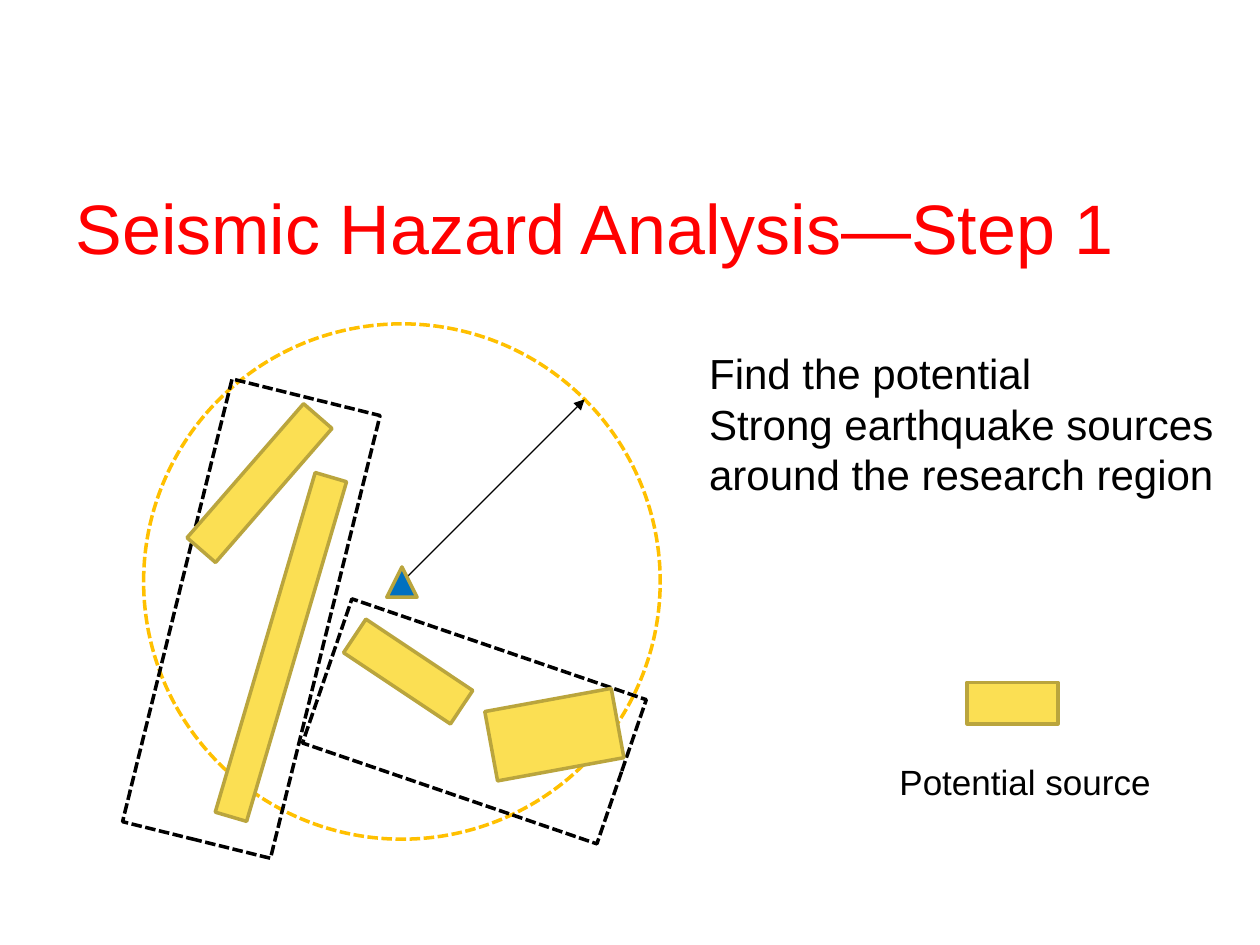
from pptx import Presentation
from pptx.dml.color import RGBColor
from pptx.enum.dml import MSO_LINE
from pptx.enum.shapes import MSO_CONNECTOR, MSO_SHAPE
from pptx.enum.text import MSO_ANCHOR, PP_ALIGN
from pptx.oxml.ns import qn
from pptx.util import Inches, Pt
from lxml import etree

RECT, OVAL = MSO_SHAPE.RECTANGLE, MSO_SHAPE.OVAL
TRIANGLE = MSO_SHAPE.ISOSCELES_TRIANGLE
DASH = MSO_LINE.SQUARE_DOT  # sysDash

COLORS = {"title": "FF0000", "text": "000000", "region": "FFC000", "zone": "000000",
          "site": "0070C0", "source": "FBDF53", "edge": "BAA53D", "paper": "FFFFFF"}

# Content: boxes are left, top, width, height in inches; rotations in degrees
TITLE = ("Seismic Hazard Analysis—Step 1", (0.5, 1.42, 9, 0.75))
TASK = (["Find the potential", "Strong earthquake sources around the research region"],
        (5.53, 2.71, 4.3, 1.31))
LEGEND = (["Potential source"], (7.04, 5.99, 2.93, 0.44))
REGION = (1.14, 2.57, 4.1, 4.09)
SITE = (3.07, 4.5, 0.24, 0.24)
RADIUS = (3.19, 4.62, 4.64, 3.17)
ZONES = [((1.39, 3.1, 1.21, 3.62), 13.9), ((3.16, 4.49, 1.21, 2.47), 288.9)]
SOURCES = [
    ((1.91, 3.13, 0.3, 1.41), 41),
    ((2.1, 3.73, 0.26, 2.81), 16.4),
    ((3.08, 4.82, 0.32, 1.02), 303.7),
    ((4.12, 5.32, 0.56, 1.02), 259.6),
    ((7.87, 5.22, 0.33, 0.72), 270),  # legend key
]


def color(name):
    return RGBColor.from_string(COLORS[name])


def inches(box):
    return [Inches(v) for v in box]


def add_outline(s, kind, box, line, fill=None, dash=None, rotation=0):
    sp = s.shapes.add_shape(kind, *inches(box))
    sp.shadow.inherit = False
    sp.rotation = rotation
    if fill:
        sp.fill.solid()
        sp.fill.fore_color.rgb = color(fill)
    else:
        sp.fill.background()
    sp.line.color.rgb = color(line)
    sp.line.width = Pt(2)
    if dash:
        sp.line.dash_style = dash
    return sp


def write(tf, lines, size, ink, anchor):
    tf.word_wrap = True
    tf.vertical_anchor = anchor
    for i, text in enumerate(lines):
        p = tf.paragraphs[0] if i == 0 else tf.add_paragraph()
        p.alignment = PP_ALIGN.LEFT
        r = p.add_run()
        r.text = text
        for name, value in {"name": "Arial", "size": Pt(size)}.items():
            setattr(r.font, name, value)
        r.font.color.rgb = color(ink)


def add_text(s, content, size, fill=None):
    lines, box = content
    sp = s.shapes.add_textbox(*inches(box))
    if fill:
        sp.fill.solid()
        sp.fill.fore_color.rgb = color(fill)
    write(sp.text_frame, lines, size, "text", MSO_ANCHOR.TOP)


def add_arrow(s, ends):
    c = s.shapes.add_connector(MSO_CONNECTOR.STRAIGHT, *inches(ends))
    c.line.color.rgb = color("text")
    c.line.width = Pt(0.75)
    etree.SubElement(c.line._get_or_add_ln(), qn("a:tailEnd"), type="triangle")
    etree.SubElement(c._element.spPr, qn("a:effectLst"))


def main():
    prs = Presentation()
    prs.slide_width, prs.slide_height = Inches(10), Inches(7.5)
    s = prs.slides.add_slide(prs.slide_layouts[5])

    # Title
    text, box = TITLE
    title = s.shapes.title
    title.left, title.top, title.width, title.height = inches(box)
    write(title.text_frame, [text], 40, "title", MSO_ANCHOR.MIDDLE)

    # Research region with its radius and site
    add_outline(s, OVAL, REGION, "region", dash=DASH)
    add_arrow(s, RADIUS)
    add_outline(s, TRIANGLE, SITE, "edge", fill="site")

    # Source zones and potential sources
    for box, angle in ZONES:
        add_outline(s, RECT, box, "zone", dash=DASH, rotation=angle)
    for box, angle in SOURCES:
        add_outline(s, RECT, box, "edge", fill="source", rotation=angle)

    # Legend label and task
    add_text(s, LEGEND, 20)
    add_text(s, TASK, 24, fill="paper")

    prs.save("out.pptx")


if __name__ == "__main__":
    main()
